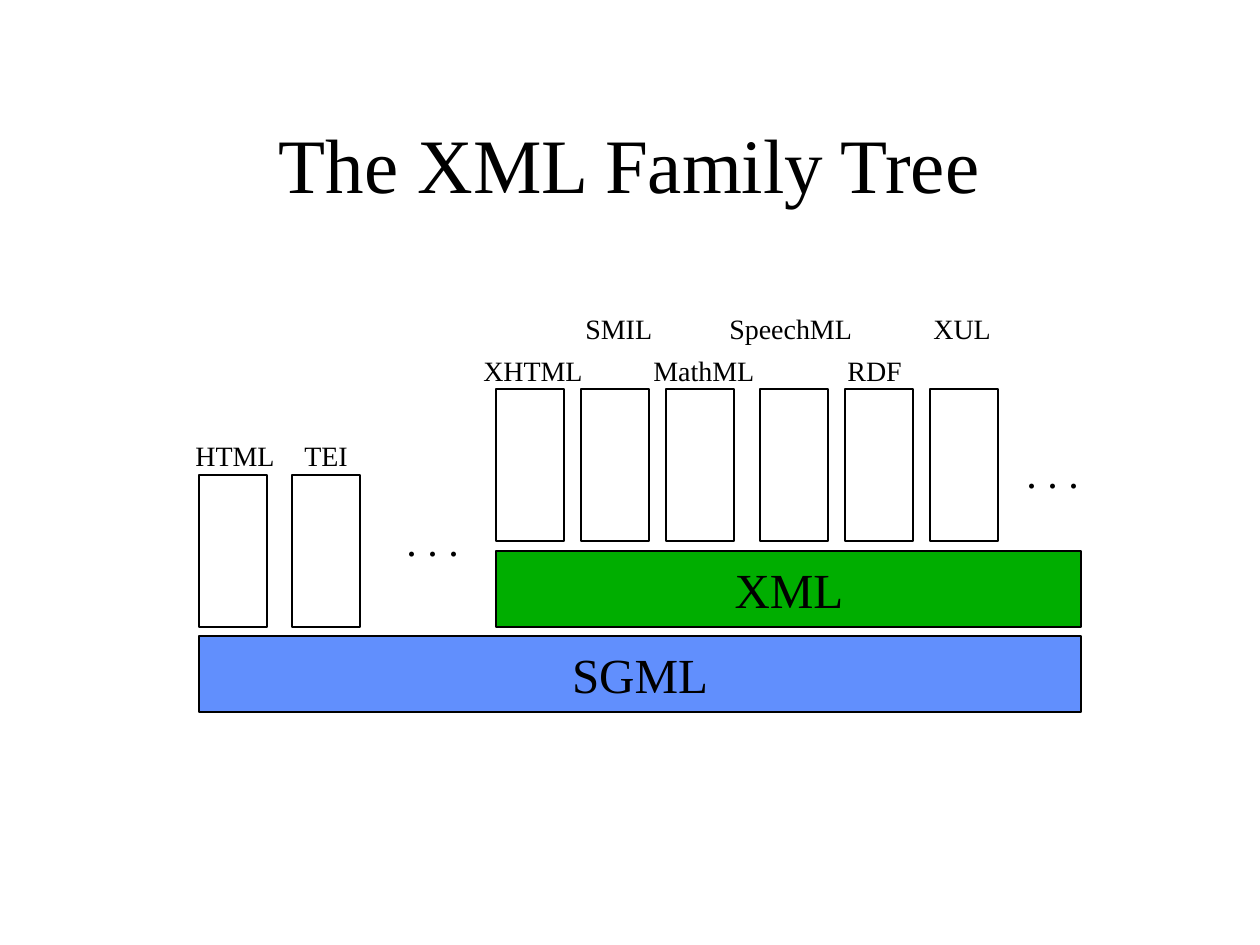
from pptx import Presentation
from pptx.dml.color import RGBColor
from pptx.enum.shapes import MSO_SHAPE
from pptx.enum.text import MSO_ANCHOR, MSO_AUTO_SIZE, PP_ALIGN
from pptx.util import Emu, Pt

RECTANGLE = MSO_SHAPE.RECTANGLE
TOP, MIDDLE = MSO_ANCHOR.TOP, MSO_ANCHOR.MIDDLE
LEFT, CENTER = PP_ALIGN.LEFT, PP_ALIGN.CENTER
GROW, FIXED = MSO_AUTO_SIZE.SHAPE_TO_FIT_TEXT, MSO_AUTO_SIZE.NONE

EMU_PER_PX = 914400 / 126
FONT = "Times New Roman"
COLORS = {"ink": "000000", "tower": "FFFFFF", "sgml": "618FFD", "xml": "00AE00"}

TOWER_WIDTH, TOWER_HEIGHT = 68, 152
LABEL_HEIGHT = 47
SGML_TOWERS_TOP, XML_TOWERS_TOP = 475, 389
XML_LEFT, TOWER_PITCH, TRIO_PITCH = 496, 85, 264
SGML_LANGUAGES = [("HTML", 199, 183, 106), ("TEI", 292, 292, 69)]
XML_LANGUAGES = [
    ("XHTML", 471, 126),
    ("SMIL", 573, 93),
    ("MathML", 641, 127),
    ("SpeechML", 717, 150),
    ("RDF", 835, 81),
    ("XUL", 921, 83),
]


def px(length):
    """Turn a length in px into EMU."""
    return Emu(round(length * EMU_PER_PX))


def box(*lengths):
    """Turn left, top, width and height in px into EMU."""
    return [px(length) for length in lengths]


def color(name):
    """Look up a named colour."""
    return RGBColor.from_string(COLORS[name])


def write(frame, text, size=16, align=LEFT, anchor=TOP, wrap=False, fit=GROW):
    """Put formatted text into a text frame."""
    frame.auto_size = fit
    frame.word_wrap = wrap
    frame.vertical_anchor = anchor
    paragraph = frame.paragraphs[0]
    paragraph.alignment = align
    run = paragraph.add_run()
    run.text = text
    run.font.size = Pt(size)
    run.font.name = FONT
    run.font.color.rgb = color("ink")


def add_text(slide, text, left, top, width, height, **text_format):
    """Add a text box."""
    frame = slide.shapes.add_textbox(*box(left, top, width, height)).text_frame
    write(frame, text, **text_format)


def add_block(slide, fill, left, top, width, height):
    """Add an outlined rectangle and return it."""
    block = slide.shapes.add_shape(RECTANGLE, *box(left, top, width, height))
    block.shadow.inherit = False
    block.fill.solid()
    block.fill.fore_color.rgb = color(fill)
    block.line.color.rgb = color("ink")
    block.line.width = Pt(1)
    return block


def add_tower(slide, left, top):
    """Add the white block that stands for one language."""
    add_block(slide, "tower", left, top, TOWER_WIDTH, TOWER_HEIGHT)


def add_foundations(slide):
    """Add the SGML and XML bars."""
    centered = {"size": 28, "align": CENTER, "anchor": MIDDLE, "fit": FIXED}
    sgml = add_block(slide, "sgml", 199, 636, 882, 76)
    write(sgml.text_frame, "SGML", **centered)
    add_block(slide, "xml", XML_LEFT, 551, 585, 76)
    add_text(slide, "XML", 507, 556, 564, 66, **centered)


def add_sgml_languages(slide):
    """Add the languages that stand on SGML."""
    for language, tower_left, label_left, label_width in SGML_LANGUAGES:
        add_tower(slide, tower_left, SGML_TOWERS_TOP)
        add_text(slide, language, label_left, 432, label_width, LABEL_HEIGHT)
    add_text(slide, ". . .", 394, 508, 78, 63, size=24)


def add_xml_languages(slide):
    """Add the languages that stand on XML, with labels at alternating heights."""
    for index, (language, label_left, label_width) in enumerate(XML_LANGUAGES):
        trio, place = divmod(index, 3)
        tower_left = XML_LEFT + trio * TRIO_PITCH + place * TOWER_PITCH
        label_top = 305 if index % 2 else 347
        add_tower(slide, tower_left, XML_TOWERS_TOP)
        add_text(slide, language, label_left, label_top, label_width, LABEL_HEIGHT)
    add_text(slide, ". . .", 1014, 440, 88, 63, size=24)


def main():
    """Build the slide and save it."""
    presentation = Presentation()
    presentation.slide_width, presentation.slide_height = px(1260), px(945)
    slide = presentation.slides.add_slide(presentation.slide_layouts[6])
    add_text(slide, "The XML Family Tree", 94, 84, 1071, 158,
             size=44, align=CENTER, anchor=MIDDLE, wrap=True, fit=FIXED)
    add_foundations(slide)
    add_sgml_languages(slide)
    add_xml_languages(slide)
    presentation.save("out.pptx")


if __name__ == "__main__":
    main()
